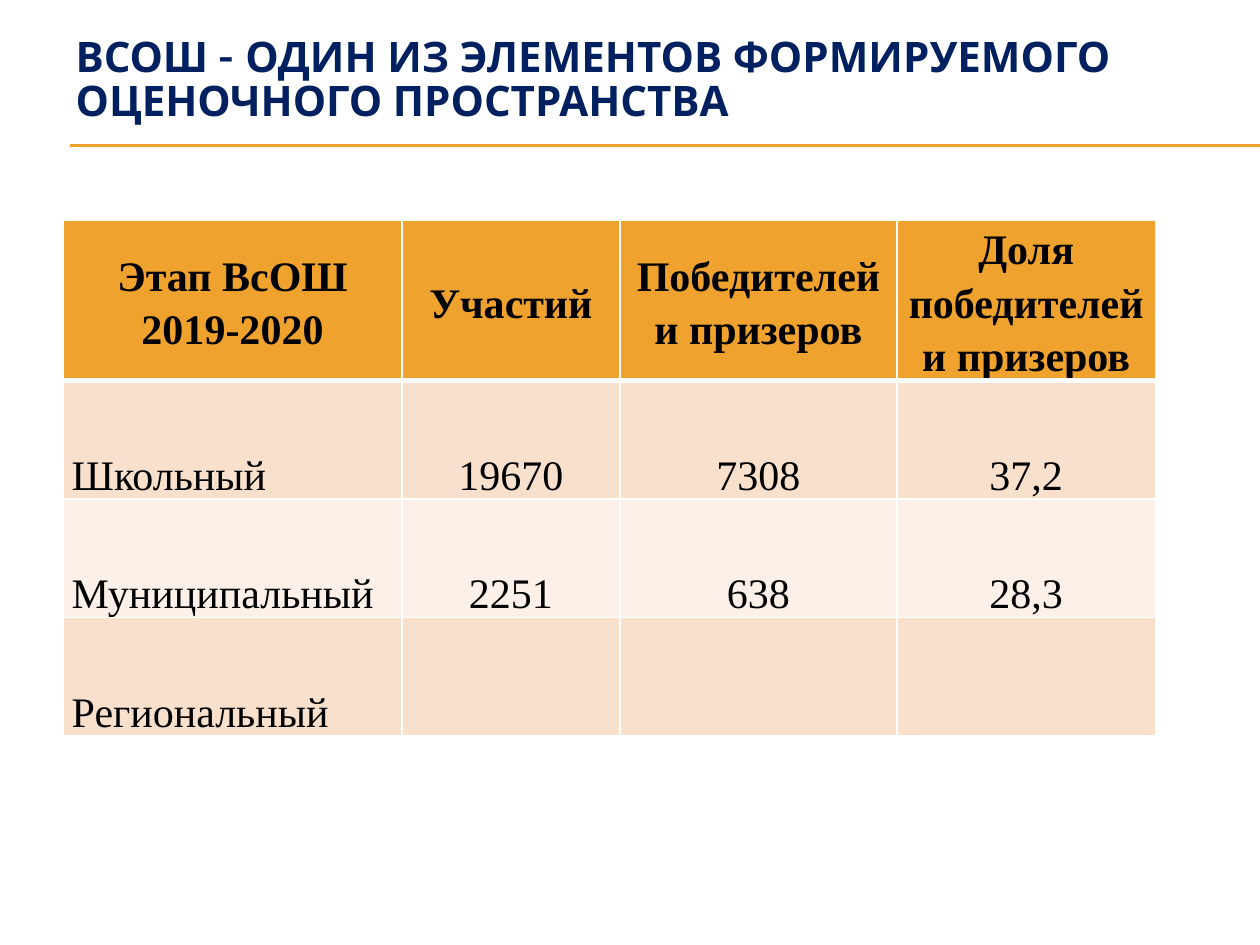
from lxml import etree
from pptx import Presentation
from pptx.dml.color import RGBColor
from pptx.enum import shapes, text
from pptx.oxml.ns import qn
from pptx.util import Pt

NAVY = RGBColor(0x00, 0x20, 0x60)
ORANGE = RGBColor(0xF0, 0xA2, 0x2E)
PEACH = RGBColor(0xF9, 0xE0, 0xCD)
CREAM = RGBColor(0xFC, 0xF0, 0xE8)
BLACK = RGBColor(0, 0, 0)
WHITE = RGBColor(0xFF, 0xFF, 0xFF)

TITLE = "ВСОШ - ОДИН ИЗ ЭЛЕМЕНТОВ ФОРМИРУЕМОГО \vОЦЕНОЧНОГО ПРОСТРАНСТВА"
ROWS = [
    ("Этап ВсОШ 2019-2020", "Участий", "Победителей и призеров",
     "Доля победителей и призеров"),
    ("Школьный", "19670", "7308", "37,2"),
    ("Муниципальный", "2251", "638", "28,3"),
    ("Региональный", "", "", ""),
]
COLUMN_WIDTHS = [193.7, 124.5, 158.4, 147.6]
ROW_HEIGHTS = [77, 67.7, 67.7, 67.7]
RULE_LEFT, RULE_TOPS = 40.3, (82.8, 83.4)
SLIDE_WIDTH, SLIDE_HEIGHT = 720, 540


def write(frame, content, *, font, color, bold=False, size=24,
          align=text.PP_ALIGN.LEFT, spacing=1.0):
    frame.text = content
    paragraph = frame.paragraphs[0]
    paragraph.alignment = align
    paragraph.line_spacing = spacing
    # An empty cell still needs its size, so format the paragraph as well
    for part in (paragraph, *paragraph.runs):
        part.font.name = font
        part.font.size = Pt(size)
        part.font.bold = bold
        part.font.color.rgb = color


def add_rule(slide, top):
    rule = slide.shapes.add_connector(
        shapes.MSO_CONNECTOR.STRAIGHT,
        Pt(RULE_LEFT), Pt(top), Pt(SLIDE_WIDTH), Pt(top))
    rule.line.color.rgb = ORANGE
    rule.line.width = Pt(0.75)
    etree.SubElement(rule._element.spPr, qn("a:effectLst"))


def set_borders(cell, widths):
    """Draw white borders; widths maps the sides L, R, T, B to points."""
    properties = cell._tc.get_or_add_tcPr()
    for index, (side, width) in enumerate(widths.items()):
        line = etree.Element(qn(f"a:ln{side}"), w=str(Pt(width)))
        fill = etree.SubElement(line, qn("a:solidFill"))
        etree.SubElement(fill, qn("a:srgbClr"), val=str(WHITE))
        properties.insert(index, line)


def fill_table(table):
    for column, width in zip(table.columns, COLUMN_WIDTHS):
        column.width = Pt(width)
    for row, height in zip(table.rows, ROW_HEIGHTS):
        row.height = Pt(height)
    for r, values in enumerate(ROWS):
        header = r == 0
        for c, value in enumerate(values):
            cell = table.cell(r, c)
            cell.margin_left = cell.margin_right = Pt(5)
            cell.margin_top = cell.margin_bottom = 0
            cell.vertical_anchor = (text.MSO_ANCHOR.MIDDLE if header
                                    else text.MSO_ANCHOR.BOTTOM)
            cell.fill.solid()
            cell.fill.fore_color.rgb = (ORANGE if header
                                        else PEACH if r % 2 else CREAM)
            set_borders(cell, {"L": 1, "R": 1, "T": 3 if r == 1 else 1,
                               "B": 3 if header else 1})
            centred = header or c > 0
            write(cell.text_frame, value, font="Times New Roman",
                  color=BLACK, bold=header, spacing=1.15,
                  align=(text.PP_ALIGN.CENTER if centred
                         else text.PP_ALIGN.LEFT))


def main():
    presentation = Presentation()
    presentation.slide_width = Pt(SLIDE_WIDTH)
    presentation.slide_height = Pt(SLIDE_HEIGHT)
    slide = presentation.slides.add_slide(presentation.slide_layouts[5])

    for top in RULE_TOPS:
        add_rule(slide, top)

    title = slide.shapes.title
    title.left, title.top = Pt(36), Pt(21.6)
    title.width, title.height = Pt(648), Pt(49.7)
    title.text_frame.vertical_anchor = text.MSO_ANCHOR.MIDDLE
    title.text_frame.auto_size = text.MSO_AUTO_SIZE.NONE
    write(title.text_frame, TITLE, font="Karla", color=NAVY, bold=True,
          spacing=0.87)

    frame = slide.shapes.add_table(
        len(ROWS), len(COLUMN_WIDTHS), Pt(36), Pt(126),
        Pt(sum(COLUMN_WIDTHS)), Pt(sum(ROW_HEIGHTS)))
    fill_table(frame.table)
    presentation.save("out.pptx")


if __name__ == "__main__":
    main()
